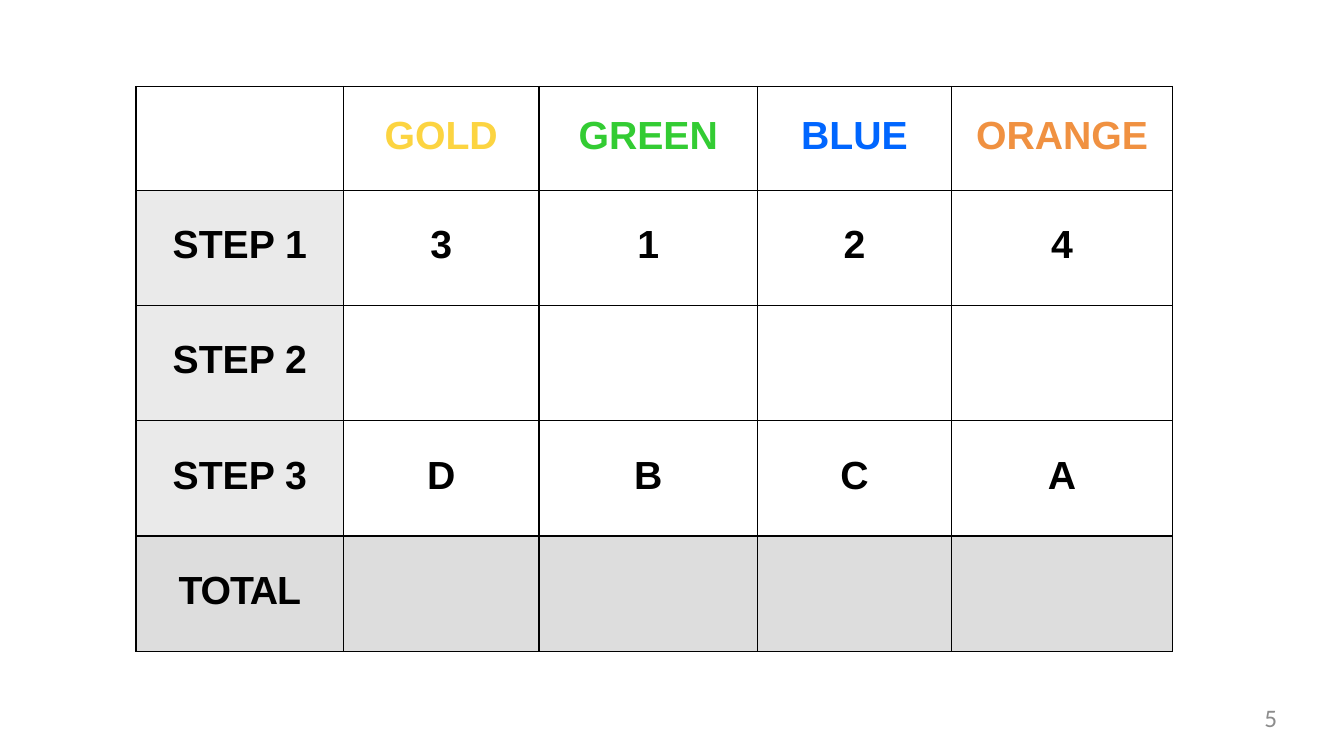
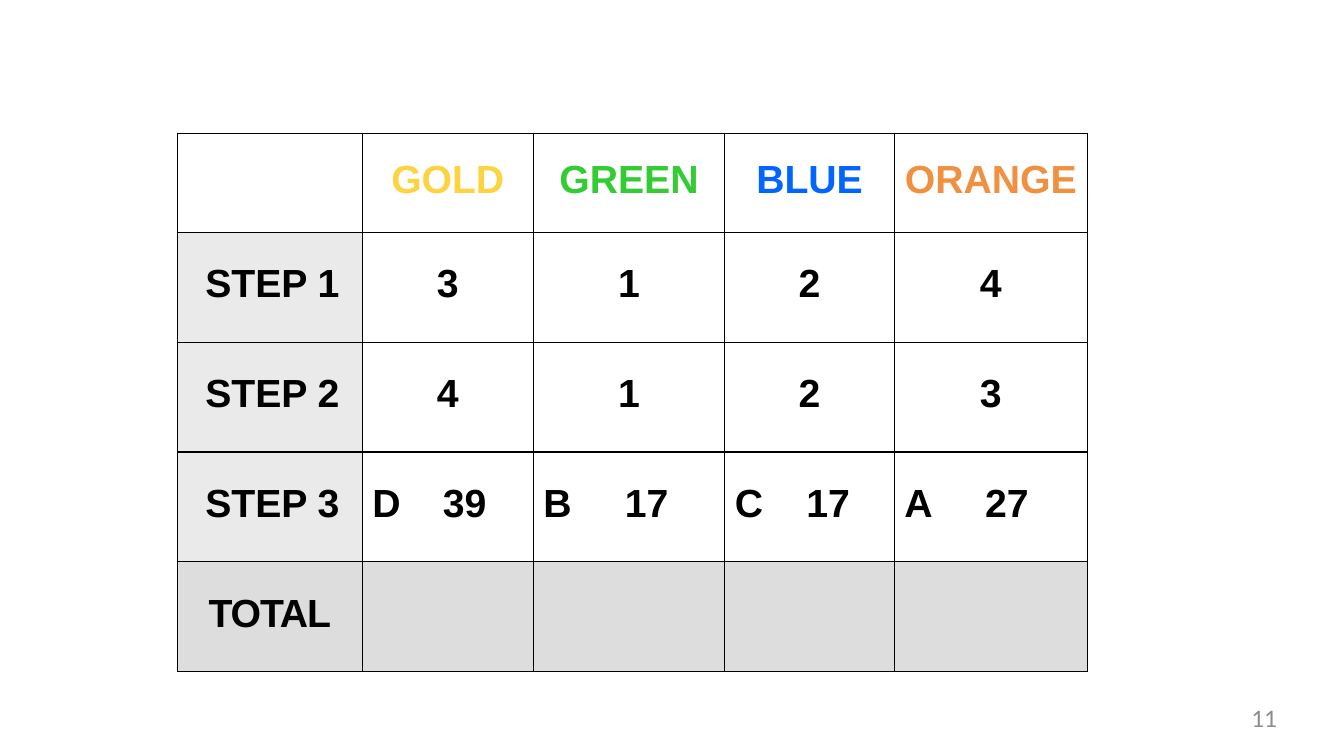
from pptx import Presentation
from pptx.dml.color import RGBColor
from pptx.enum.text import MSO_AUTO_SIZE, PP_ALIGN as Align
from pptx.oxml.ns import qn
from pptx.util import Pt
from lxml.etree import SubElement

# Content
COLORS = {
    "gold": "FCD441", "green": "33CC33", "blue": "0066FF", "orange": "F09141",
    "text": "000000", "border": "000000", "step": "EAEAEA", "total": "DDDDDD",
    "number": "8C8C8C",
}
TEAMS = ["GOLD", "GREEN", "BLUE", "ORANGE"]
BLANK = [""] * len(TEAMS)
SLIDES = [
    {
        "number": "5", "left": 97.2, "top": 61.8,
        "columns": [148.2, 139.6, 156.1, 138.6, 157.9],
        "header_height": 74.2, "row_height": 82.3,
        "header_inset": 19.4, "row_inset": 23.5, "step_shift": 0,
        "scores": [["3", "1", "2", "4"], BLANK, ["D", "B", "C", "A"]],
        "tabs": [],
    },
    {
        "number": "11", "left": 126.7, "top": 95.2,
        "columns": [132.1, 122.1, 136.8, 121.1, 137.9],
        "header_height": 70.7, "row_height": 78.5,
        "header_inset": 17.5, "row_inset": 21.5, "step_shift": 3.6,
        "scores": [["3", "1", "2", "4"], ["4", "1", "2", "3"],
                   ["D\t39", "B\t17", "C\t17", "A\t27"]],
        "tabs": [50.4, 58.3, 51.1, 57.6],
    },
]
TABLE_FONT = {"name": "Arial", "size": Pt(28), "bold": True}
NUMBER_FONT = {"name": "Calibri", "size": Pt(18)}
TAB_INSET = 7.2


# Shared helpers
def rgb(key):
    return RGBColor.from_string(COLORS[key])


def write(para, text, font_format, color):
    span = para.add_run()
    span.text = text
    for name, value in font_format.items():
        setattr(span.font, name, value)
    span.font.color.rgb = rgb(color)
    return span


def set_margins(target, left=0, top=0):
    margins = {"left": left, "top": top, "right": 0, "bottom": 0}
    for side, value in margins.items():
        setattr(target, f"margin_{side}", Pt(value))


def add_borders(cell):
    props = cell._tc.get_or_add_tcPr()
    for position, side in enumerate(("lnL", "lnR", "lnT", "lnB")):
        line = props.makeelement(qn(f"a:{side}"), {"w": str(Pt(1))})
        fill = SubElement(line, qn("a:solidFill"))
        SubElement(fill, qn("a:srgbClr"), val=COLORS["border"])
        props.insert(position, line)


def add_tab(para, position):
    tabs = SubElement(para._p.get_or_add_pPr(), qn("a:tabLst"))
    SubElement(tabs, qn("a:tab"), pos=str(Pt(position)), algn="l")


def fill_cell(cell, row, column, text, layout):
    is_total = row == len(layout["scores"]) + 1
    if is_total or (column == 0 and row > 0):
        cell.fill.solid()
        cell.fill.fore_color.rgb = rgb("total" if is_total else "step")
    else:
        cell.fill.background()
    add_borders(cell)

    is_step = column == 0 and not is_total
    inset = layout["row_inset"] if row else layout["header_inset"]
    set_margins(cell, layout["step_shift"] if is_step else 0, inset)
    if not text:
        return
    para = cell.text_frame.paragraphs[0]
    if "\t" in text:
        cell.margin_left = Pt(TAB_INSET)
        para.alignment = Align.LEFT
        add_tab(para, layout["tabs"][column - 1])
    else:
        para.alignment = Align.CENTER
    span = write(para, text, TABLE_FONT, "text" if row else text.lower())
    if text == "TOTAL":
        span._r.get_or_add_rPr().set("spc", "-80")


def add_score_table(page, layout):
    steps = [[f"STEP {i}", *scores] for i, scores in enumerate(layout["scores"], 1)]
    rows = [["", *TEAMS], *steps, ["TOTAL", *BLANK]]
    heights = [layout["header_height"]] + [layout["row_height"]] * (len(rows) - 1)
    widths = layout["columns"]
    table = page.shapes.add_table(
        len(rows), len(widths), Pt(layout["left"]), Pt(layout["top"]),
        Pt(sum(widths)), Pt(sum(heights))).table
    table.first_row = table.horz_banding = False
    for column, width in zip(table.columns, widths):
        column.width = Pt(width)
    for r, (texts, height) in enumerate(zip(rows, heights)):
        table.rows[r].height = Pt(height)
        for c, text in enumerate(texts):
            fill_cell(table.cell(r, c), r, c, text, layout)


def add_page_number(page, number):
    box = page.shapes.add_textbox(Pt(691.2), Pt(502), Pt(221), Pt(27.4))
    frame = box.text_frame
    frame.word_wrap = True
    frame.auto_size = MSO_AUTO_SIZE.SHAPE_TO_FIT_TEXT
    set_margins(frame)
    para = frame.paragraphs[0]
    para.alignment = Align.RIGHT
    write(para, number, NUMBER_FONT, "number")


# Build the deck
def main():
    deck = Presentation()
    deck.slide_width, deck.slide_height = Pt(960), Pt(540)
    for layout in SLIDES:
        page = deck.slides.add_slide(deck.slide_layouts[6])
        add_score_table(page, layout)
        add_page_number(page, layout["number"])
    deck.save("out.pptx")


if __name__ == "__main__":
    main()
